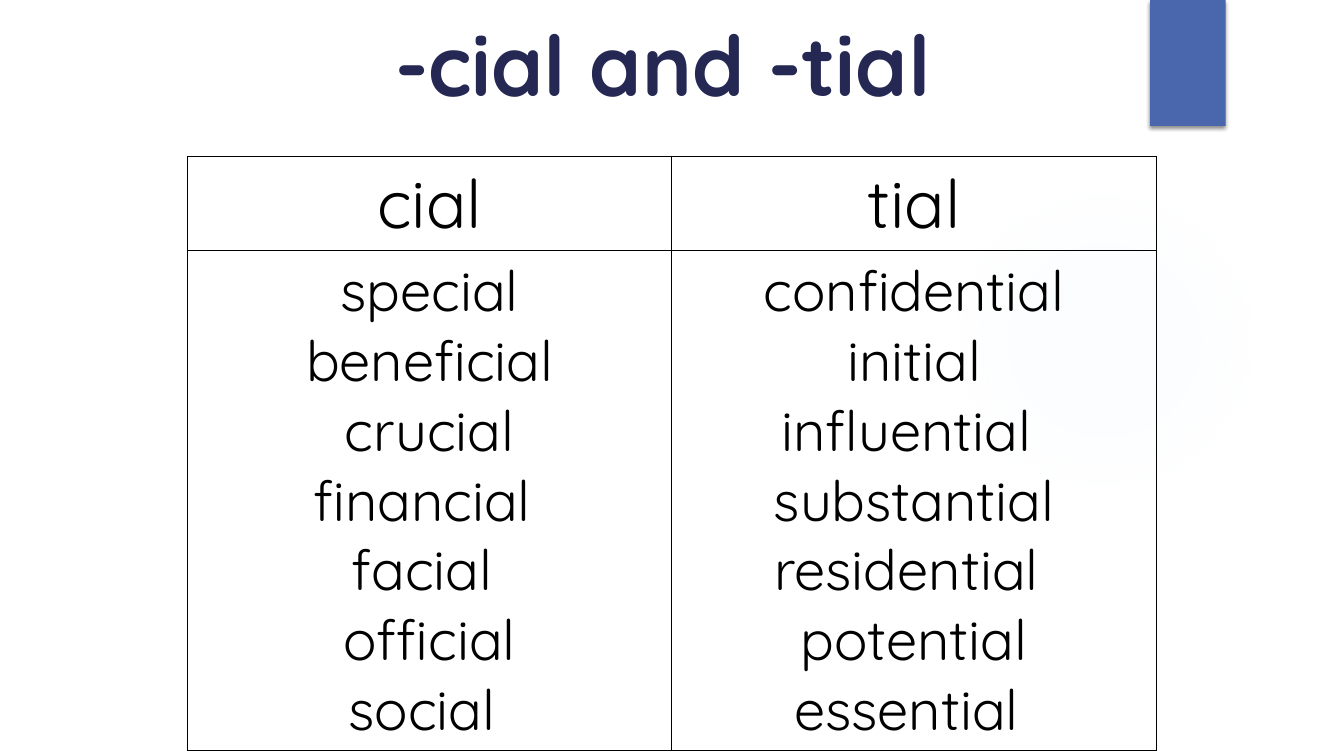
import pptx
import pptx.util
import pptx.oxml
import pptx.oxml.ns
import pptx.dml.color
import pptx.enum.shapes
import pptx.enum.text

Pt = pptx.util.Pt
qn = pptx.oxml.ns.qn
COLORS = {"title": "242852", "text": "000000", "tab": "4A66AC", "glow": "CDE0FB"}
HEADS = ["cial", "tial"]
WORDS = [
    ["special", "beneficial", "crucial", "financial ", "facial ", "official", "social "],
    ["confidential", "initial", "influential ", "substantial", "residential ",
     "potential", "essential "],
]


def node(tag, body="", **attrs):
    text = "".join(f' {key}="{val}"' for key, val in attrs.items())
    space = pptx.oxml.ns.nsdecls("a")
    return pptx.oxml.parse_xml(f"<a:{tag} {space}{text}>{body}</a:{tag}>")


def tint(color, alpha=100):
    return f'<a:srgbClr val="{COLORS[color]}"><a:alpha val="{alpha * 1000}"/></a:srgbClr>'


class Page:
    font = "Quicksand"

    def __init__(self, deck):
        self.slide = deck.slides.add_slide(deck.slide_layouts[5])

    def style(self, para, size, color, align, bold=False):
        para.alignment = align
        for run in para.runs:
            run.font.name = self.font
            run.font.size = Pt(size)
            run.font.bold = bold
            run.font.color.rgb = pptx.dml.color.RGBColor.from_string(COLORS[color])

    def shape(self, kind, *box):
        shape = self.slide.shapes.add_shape(kind, *map(Pt, box))
        shape.shadow.inherit = False
        shape.line.fill.background()
        return shape

    def glow(self, *box):
        shape = self.shape(pptx.enum.shapes.MSO_SHAPE.OVAL, *box)
        shape.fill.gradient()
        grad = shape._element.spPr.find(qn("a:gradFill"))
        for child in list(grad):
            grad.remove(child)
        stops = "".join(f'<a:gs pos="{pos * 1000}">{tint("glow", alpha)}</a:gs>'
                        for pos, alpha in [(0, 7), (36, 6), (69, 0)])
        grad.append(node("gsLst", stops))
        half = '<a:fillToRect l="50000" t="50000" r="50000" b="50000"/>'
        grad.append(node("path", half, path="circle"))

    def tab(self, *box):
        shape = self.shape(pptx.enum.shapes.MSO_SHAPE.RECTANGLE, *box)
        shape.fill.solid()
        shape.fill.fore_color.rgb = pptx.dml.color.RGBColor.from_string(COLORS["tab"])
        shade = node("outerShdw", tint("text", 45), blurRad=Pt(3), dist=Pt(2),
                     dir=90 * 60000, rotWithShape=0)
        shape._element.spPr.find(qn("a:effectLst")).append(shade)

    def title(self, text, *box):
        title = self.slide.shapes.title
        title.left, title.top, title.width, title.height = map(Pt, box)
        frame = title.text_frame
        frame.text = text
        frame.word_wrap = True
        frame.vertical_anchor = pptx.enum.text.MSO_ANCHOR.MIDDLE
        self.style(frame.paragraphs[0], 60, "title", pptx.enum.text.PP_ALIGN.LEFT, True)

    def cell(self, cell, text, size):
        cell.text_frame.text = text
        for para in cell.text_frame.paragraphs:
            self.style(para, size, "text", pptx.enum.text.PP_ALIGN.CENTER)
        cell.fill.background()
        props = cell._tc.get_or_add_tcPr()
        for spot, side in enumerate("LRTB"):
            line = node("ln" + side, f'<a:solidFill>{tint("text")}</a:solidFill>', w=Pt(1))
            props.insert(spot, line)

    def table(self, left, top, wide, highs):
        table = self.slide.shapes.add_table(
            2, 2, Pt(left), Pt(top), Pt(wide * 2), Pt(sum(highs))).table
        table.first_row = table.horz_banding = False
        for row, high in zip(table.rows, highs):
            row.height = Pt(high)
        for col, (head, words) in enumerate(zip(HEADS, WORDS)):
            table.columns[col].width = Pt(wide)
            self.cell(table.cell(0, col), head, 48)
            self.cell(table.cell(1, col), "\n".join(words), 40)


def main():
    deck = pptx.Presentation()
    deck.slide_width, deck.slide_height = Pt(960), Pt(540)
    page = Page(deck)

    # Backdrop
    page.glow(677.5, 131.8, 221.8, 221.8)
    page.tab(821.5, 0, 54, 90)

    # Heading and word lists
    page.title("-cial and -tial", 275, 0, 410.4, 90)
    page.table(133.9, 111.6, 346, [67, 357])

    deck.save("out.pptx")


if __name__ == "__main__":
    main()
